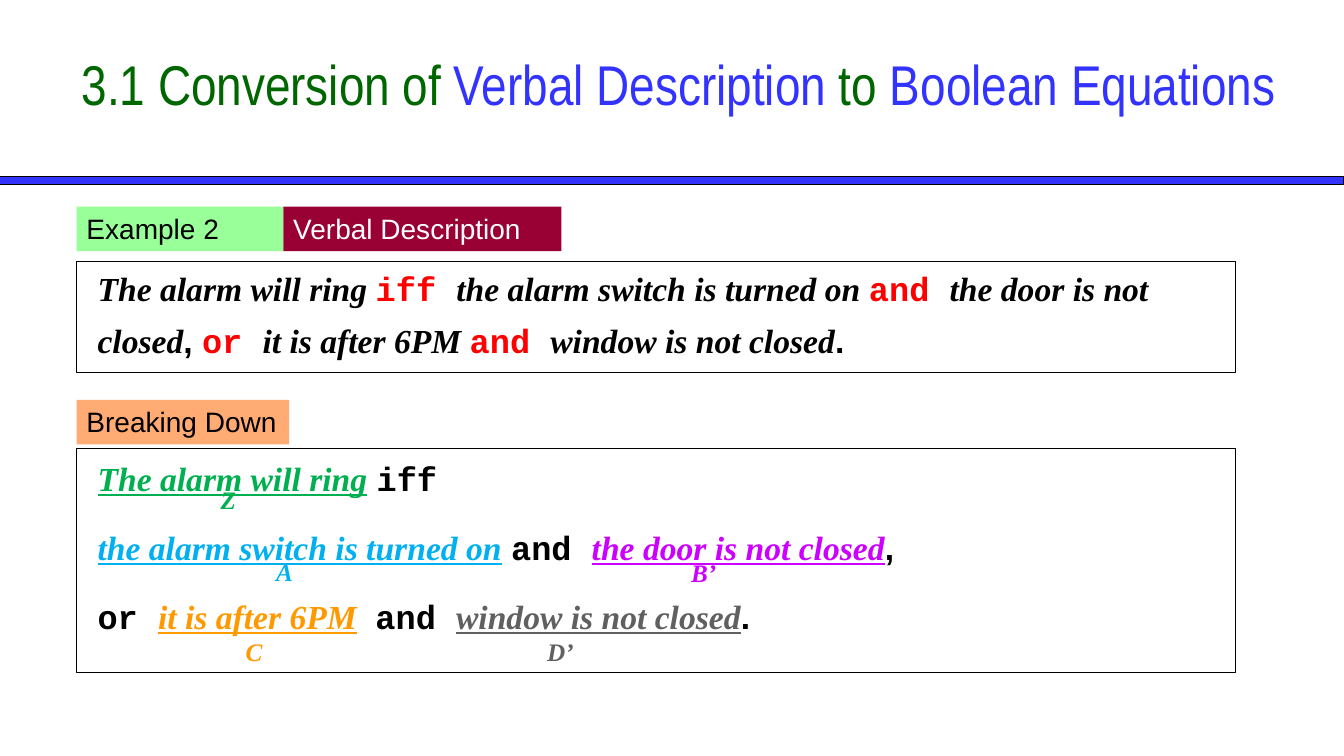
from dataclasses import dataclass
from typing import NamedTuple, Optional

from lxml.etree import SubElement
from pptx import Presentation
from pptx.dml.color import RGBColor as RGB
from pptx.enum.shapes import MSO_SHAPE as SHAPE
from pptx.enum.text import MSO_ANCHOR as ANCHOR, MSO_AUTO_SIZE as FIT, PP_ALIGN as ALIGN
from pptx.oxml.ns import qn
from pptx.util import Cm, Pt

COLORS = {
    "black": "000000", "white": "FFFFFF", "blue": "3333FF", "forest": "006600",
    "red": "FF0000", "green": "00B050", "sky": "00B0F0", "magenta": "CC00FF",
    "amber": "FF9900", "gray": "606060", "orange": "FF6600", "mint": "99FF99",
    "maroon": "990033",
}
CLAUSE = {"name": "Times New Roman", "size": Pt(24), "bold": True, "italic": True}
TERM = {**CLAUSE, "underline": True}
WORD = {"name": "Courier New", "size": Pt(24), "bold": True}
MARK = {**WORD, "name": "Arial"}
SYMBOL = {**CLAUSE, "size": Pt(18)}
CHIP = {"name": "Arial", "size": Pt(20)}
TITLE = {"name": "Arial Narrow", "size": Pt(40)}
PASSAGE = {"line_spacing": 1.3, "space_before": Pt(12)}
CENTERED = {"alignment": ALIGN.CENTER}
LEFT = {"alignment": ALIGN.LEFT}


class Box(NamedTuple):
    """Position and size in centimetres."""
    x: float
    y: float
    w: float
    h: float


class Run(NamedTuple):
    """A stretch of text in one format."""
    text: str
    style: dict
    color: str = "black"


@dataclass
class Text:
    """A text box holding paragraphs of runs."""
    box: Box
    paragraphs: list
    layout: dict
    wrap: bool = True


@dataclass
class Rect:
    """A rectangle with optional fill, outline and text."""
    box: Box
    fill: Optional[str] = None
    line: Optional[str] = None
    alpha: Optional[int] = None
    run: Optional[Run] = None
    wrap: bool = True


def write(tf, paragraphs: list, layout: dict, wrap: bool) -> None:
    """Fill a text frame with formatted paragraphs."""
    frame = {"word_wrap": wrap, "auto_size": FIT.NONE, "vertical_anchor": ANCHOR.TOP}
    for key, value in frame.items():
        setattr(tf, key, value)
    for i, runs in enumerate(paragraphs):
        p = tf.add_paragraph() if i else tf.paragraphs[0]
        for key, value in layout.items():
            setattr(p, key, value)
        for run in runs:
            r = p.add_run()
            r.text = run.text
            for key, value in run.style.items():
                setattr(r.font, key, value)
            r.font.color.rgb = RGB.from_string(COLORS[run.color])


def draw_text(s, item: Text) -> None:
    """Draw a text box."""
    sp = s.shapes.add_textbox(*map(Cm, item.box))
    write(sp.text_frame, item.paragraphs, item.layout, item.wrap)


def draw_rect(s, item: Rect) -> None:
    """Draw a rectangle."""
    sp = s.shapes.add_shape(SHAPE.RECTANGLE, *map(Cm, item.box))
    sp.shadow.inherit = False
    if item.fill:
        sp.fill.solid()
        sp.fill.fore_color.rgb = RGB.from_string(COLORS[item.fill])
    else:
        sp.fill.background()
    if item.alpha:
        color = sp.fill._xPr.find(qn("a:solidFill"))[0]
        SubElement(color, qn("a:alpha"), val=str(item.alpha * 1000))
    if item.line:
        sp.line.color.rgb = RGB.from_string(COLORS[item.line])
        sp.line.width = Pt(0.75)
    else:
        sp.line.fill.background()
    if item.run:
        write(sp.text_frame, [[item.run]], LEFT, item.wrap)


BAR = Rect(Box(0, 4.45, 33.87, 0.2), "blue", "black")
HEADING = Text(Box(0, 1.12, 33.87, 2.41), [[
    Run(" 3.1 Conversion of ", TITLE, "forest"),
    Run("Verbal Description ", TITLE, "blue"),
    Run("to ", TITLE, "forest"),
    Run("Boolean Equations", TITLE, "blue"),
]], CENTERED)
STATEMENT = Text(Box(2.21, 6.32, 28.83, 2.92), [[
    Run("The alarm will ring ", CLAUSE),
    Run("iff ", WORD, "red"),
    Run("the alarm switch is turned on ", CLAUSE),
    Run("and ", WORD, "red"),
    Run("the door is not closed", CLAUSE),
    Run(", ", MARK),
    Run("or ", WORD, "red"),
    Run("it is after 6PM ", CLAUSE),
    Run("and ", WORD, "red"),
    Run("window is not closed", CLAUSE),
    Run(".", MARK),
]], PASSAGE)
BREAKDOWN = Text(Box(2.21, 11.1, 28.83, 5.16), [
    [Run("The alarm will ring", TERM, "green"), Run(" ", MARK), Run("iff", WORD)],
    [Run("the alarm switch is turned on", TERM, "sky"), Run(" ", MARK),
     Run("and ", WORD), Run("the door is not closed", TERM, "magenta"), Run(",", MARK)],
    [Run("or ", WORD), Run("it is after 6PM", TERM, "amber"), Run("  ", MARK),
     Run("and ", WORD), Run("window is not closed", TERM, "gray"), Run(".", MARK)],
], PASSAGE)
SYMBOLS = [
    Text(Box(x, y, w, 1.02), [[Run(name, SYMBOL, color)]], LEFT, False)
    for name, color, x, y, w in [
        ("Z", "green", 5.31, 12.09, 0.91),
        ("A", "sky", 6.71, 13.89, 0.94),
        ("B’", "magenta", 17.17, 13.92, 1.14),
        ("C", "amber", 5.94, 15.9, 0.94),
        ("D’", "gray", 13.54, 15.9, 1.19),
    ]
]
FRAMES = [Rect(Box(1.93, y, 29.21, h), line="black") for y, h in [(6.58, 2.82), (11.3, 5.64)]]
CHIPS = [
    Rect(Box(1.93, 10.08, 5.36, 1.12), "orange", alpha=55,
         run=Run("Breaking Down", CHIP), wrap=False),
    Rect(Box(1.93, 5.21, 5.21, 1.12), "mint", run=Run("Example 2", CHIP)),
    Rect(Box(7.14, 5.21, 7.01, 1.12), "maroon", run=Run("Verbal Description", CHIP, "white")),
]


def main() -> None:
    """Build and save the slide."""
    prs = Presentation()
    prs.slide_width, prs.slide_height = Cm(33.87), Cm(19.05)
    s = prs.slides.add_slide(prs.slide_layouts[6])
    for item in [BAR, STATEMENT, BREAKDOWN, *SYMBOLS, *FRAMES, *CHIPS, HEADING]:
        if isinstance(item, Text):
            draw_text(s, item)
        else:
            draw_rect(s, item)
    prs.save("out.pptx")


if __name__ == "__main__":
    main()
